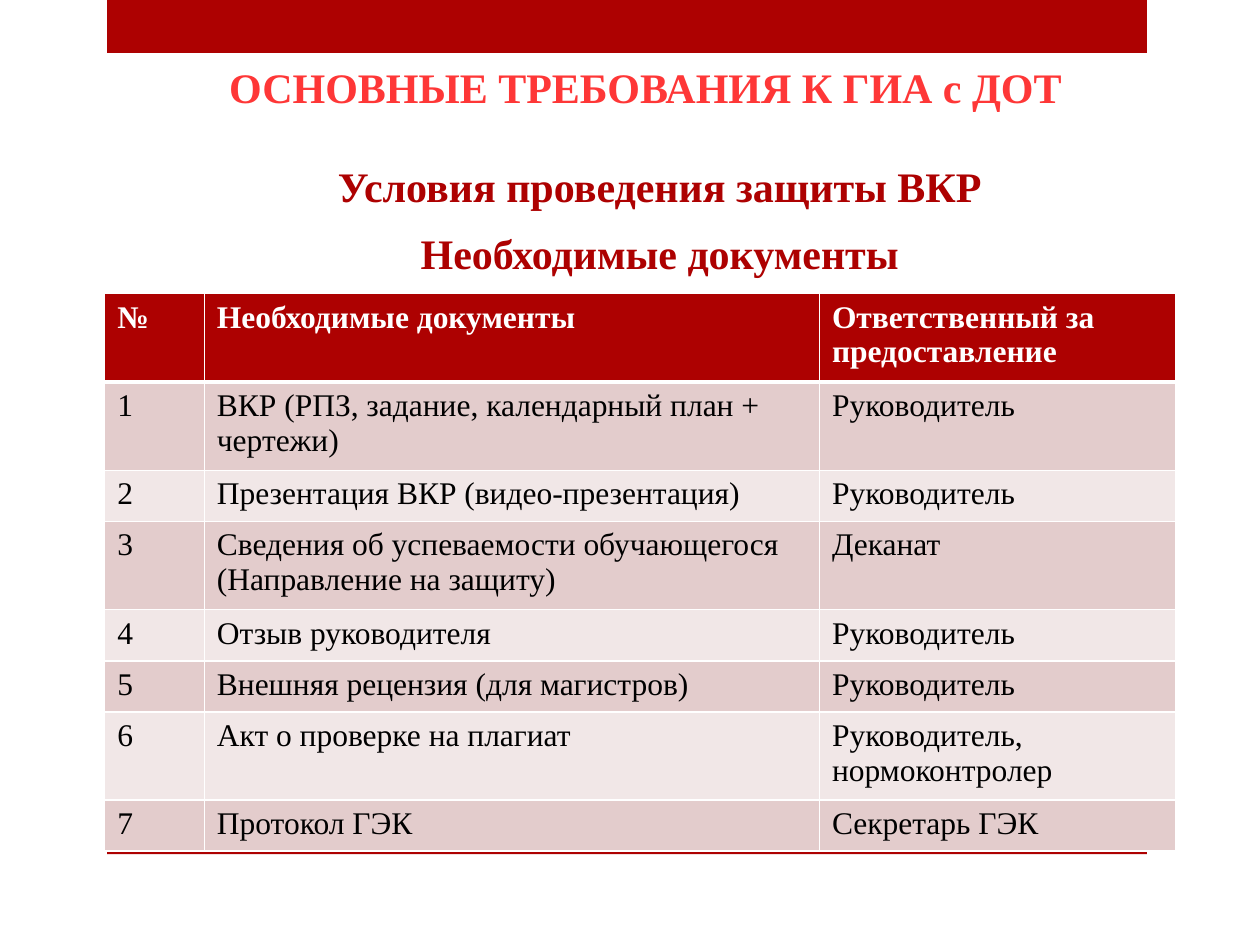
from dataclasses import dataclass

from lxml.etree import SubElement
from pptx import Presentation
from pptx.dml.color import RGBColor
from pptx.enum.shapes import MSO_SHAPE
from pptx.enum.text import MSO_ANCHOR, MSO_AUTO_SIZE, PP_ALIGN
from pptx.oxml.ns import qn
from pptx.util import Cm, Pt

HUES = {
    "red": "AD0101",
    "title": "FE3737",
    "white": "FFFFFF",
    "black": "000000",
    "odd": "E3CCCC",
    "even": "F1E7E7",
}
FACE = "Times New Roman"
HEAD = ("№", "Необходимые документы", "Ответственный за предоставление")
WIDTHS = (2.01, 12.4, 7.18)
SHORT, TALL = 1.03, 1.78


@dataclass
class Box:
    left: float
    top: float
    width: float
    height: float

    def place(self) -> tuple:
        return Cm(self.left), Cm(self.top), Cm(self.width), Cm(self.height)


@dataclass
class Entry:
    paper: str
    owner: str = "Руководитель"
    height: float = SHORT


BARS = (Box(2.16, 0, 20.96, 1.07), Box(2.16, 17.15, 20.96, 0.07))
TITLE = Box(3.91, 1.12, 18.21, 1.27)
TOPIC = Box(6.3, 3.12, 14, 2.62)
TABLE = Box(2.11, 5.92, sum(WIDTHS), 4 * (SHORT + TALL))

ENTRIES = (
    Entry("ВКР (РПЗ, задание, календарный план + чертежи)", height=TALL),
    Entry("Презентация ВКР (видео-презентация)"),
    Entry("Сведения об успеваемости обучающегося (Направление на защиту)",
          "Деканат", TALL),
    Entry("Отзыв руководителя"),
    Entry("Внешняя рецензия (для магистров)"),
    Entry("Акт о проверке на плагиат", "Руководитель, нормоконтролер", TALL),
    Entry("Протокол ГЭК", "Секретарь ГЭК"),
)


def color(name: str) -> RGBColor:
    return RGBColor.from_string(HUES[name])


def write(frame, text: str, *, size: float = 18, hue: str = "black",
          bold: bool = False, align=PP_ALIGN.LEFT, gap: float = 0) -> None:
    frame.word_wrap = True
    frame.text = text
    for index, para in enumerate(frame.paragraphs):
        para.alignment = align
        if index:
            para.space_before = Pt(gap)
        for run in para.runs:
            font = run.font
            font.name, font.size, font.bold = FACE, Pt(size), bold
            font.color.rgb = color(hue)


def heading(shape, text: str, hue: str, gap: float = 0) -> None:
    frame = shape.text_frame
    write(frame, text, size=24, hue=hue, bold=True,
          align=PP_ALIGN.CENTER, gap=gap)
    frame.vertical_anchor = MSO_ANCHOR.TOP
    frame.auto_size = MSO_AUTO_SIZE.SHAPE_TO_FIT_TEXT


def draw_bar(slide, box: Box) -> None:
    bar = slide.shapes.add_shape(MSO_SHAPE.RECTANGLE, *box.place())
    bar.shadow.inherit = False
    bar.fill.solid()
    bar.fill.fore_color.rgb = color("red")
    bar.line.fill.background()


def edge(cell, top: float, bottom: float) -> None:
    props = cell._tc.get_or_add_tcPr()
    for side, width in (("L", 1), ("R", 1), ("T", top), ("B", bottom)):
        line = SubElement(props, qn(f"a:ln{side}"), w=str(Pt(width)))
        fill = SubElement(line, qn("a:solidFill"))
        SubElement(fill, qn("a:srgbClr"), val=HUES["white"])


def draw_table(slide) -> None:
    count = len(ENTRIES) + 1
    table = slide.shapes.add_table(count, len(HEAD), *TABLE.place()).table
    for column, width in zip(table.columns, WIDTHS):
        column.width = Cm(width)
    rows = [(HEAD, TALL)]
    rows += [((str(number), entry.paper, entry.owner), entry.height)
             for number, entry in enumerate(ENTRIES, 1)]
    for index, (texts, height) in enumerate(rows):
        first = index == 0
        table.rows[index].height = Cm(height)
        back = "red" if first else "odd" if index % 2 else "even"
        for cell, text in zip(table.rows[index].cells, texts):
            edge(cell, 3 if index == 1 else 1, 3 if first else 1)
            cell.fill.solid()
            cell.fill.fore_color.rgb = color(back)
            write(cell.text_frame, text, bold=first,
                  hue="white" if first else "black")


def main() -> None:
    deck = Presentation()
    deck.slide_width, deck.slide_height = Cm(25.4), Cm(19.05)
    slide = deck.slides.add_slide(deck.slide_layouts[5])
    for box in BARS:
        draw_bar(slide, box)
    title = slide.shapes.title
    title.left, title.top, title.width, title.height = TITLE.place()
    heading(title, "ОСНОВНЫЕ ТРЕБОВАНИЯ К ГИА с ДОТ", "title")
    topic = slide.shapes.add_textbox(*TOPIC.place())
    heading(topic, "Условия проведения защиты ВКР\nНеобходимые документы",
            "red", gap=9.5)
    draw_table(slide)
    deck.save("out.pptx")


if __name__ == "__main__":
    main()
